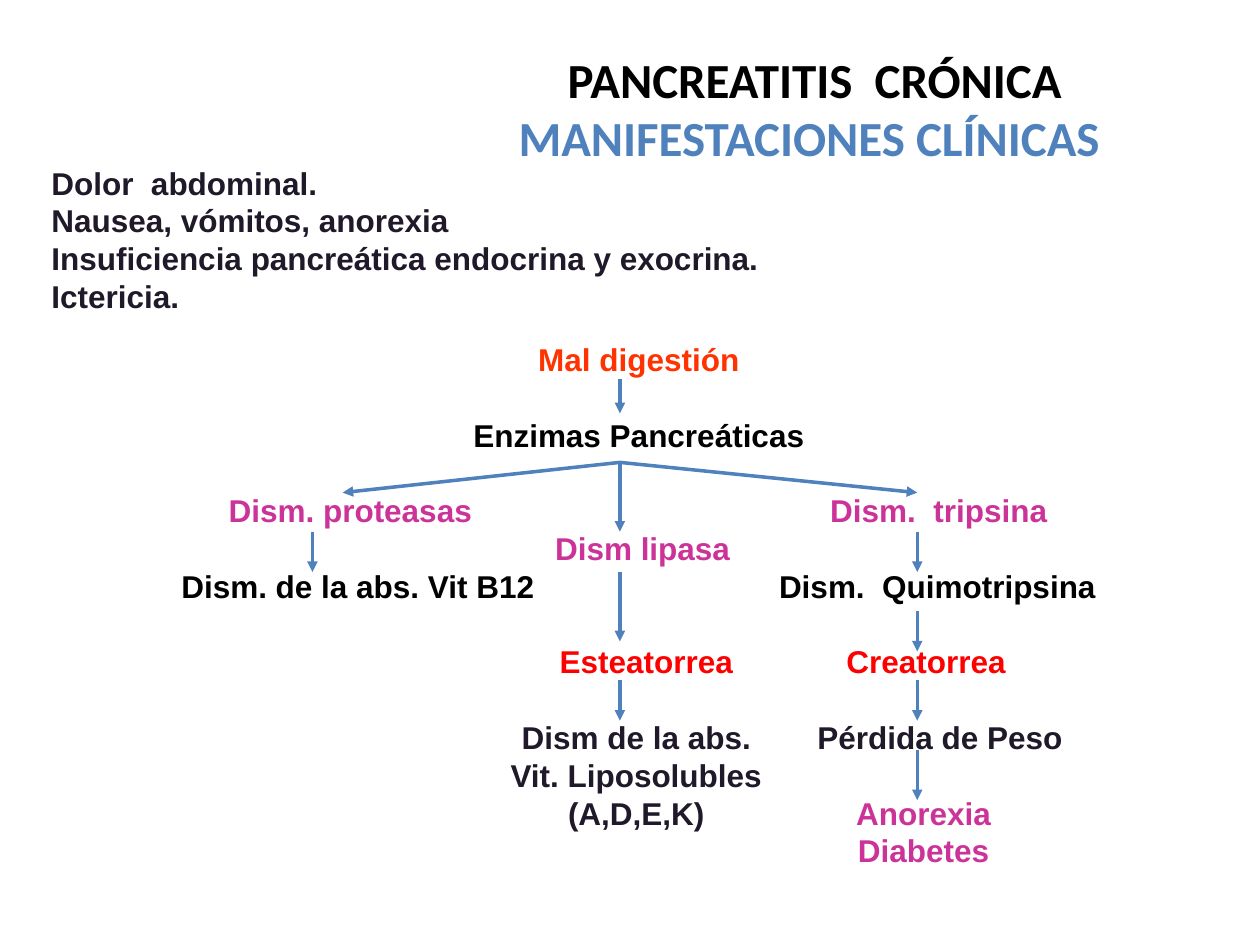
from pptx import Presentation
from pptx.dml.color import RGBColor as Rgb
from pptx.enum.shapes import MSO_CONNECTOR as Link
from pptx.enum.text import PP_ALIGN as Align
from pptx.oxml import parse_xml
from pptx.oxml.ns import nsdecls
from pptx.util import Inches, Pt

deck = Presentation()
deck.slide_width, deck.slide_height = Inches(10), Inches(7.5)
slide = deck.slides.add_slide(deck.slide_layouts[6])
cell = deck.slide_width / 100
BLACK, DARK, BLUE = "000000", "201929", "4F81BD"
PINK, RED, WARM = "CC3399", "FF0000", "FF3300"


def grid(*cells):
    return [round(n * cell) for n in cells]


def write(area, lines, size=18, face="Arial", align=Align.CENTER, pad=0):
    frame = slide.shapes.add_textbox(*grid(*area)).text_frame
    look = {"word_wrap": True, "margin_left": Inches(pad), "margin_right": Inches(pad)}
    for name, value in look.items():
        setattr(frame, name, value)
    for i, (text, tint) in enumerate(lines):
        para = frame.add_paragraph() if i else frame.paragraphs[0]
        para.alignment = align
        run = para.add_run()
        run.text = text
        for name, value in {"size": Pt(size), "name": face, "bold": True}.items():
            setattr(run.font, name, value)
        run.font.color.rgb = Rgb.from_string(tint)


signs = ["Dolor  abdominal.", "Nausea, vómitos, anorexia",
         "Insuficiencia pancreática endocrina y exocrina.", "Ictericia."]
write((3.1, 12.5, 62, 13), [(text, DARK) for text in signs], align=Align.LEFT, pad=0.1)

top, pitch = 26.5, 3
labels = [
    (50.7, 0, WARM, ["Mal digestión"]),
    (50.7, 2, BLACK, ["Enzimas Pancreáticas"]),
    (27.8, 4, PINK, ["Dism. proteasas"]),
    (74.5, 4, PINK, ["Dism.  tripsina"]),
    (51, 5, PINK, ["Dism lipasa"]),
    (28.4, 6, BLACK, ["Dism. de la abs. Vit B12"]),
    (74.4, 6, BLACK, ["Dism.  Quimotripsina"]),
    (51.3, 8, RED, ["Esteatorrea"]),
    (73.5, 8, RED, ["Creatorrea"]),
    (50.5, 10, DARK, ["Dism de la abs.", "Vit. Liposolubles", "(A,D,E,K)"]),
    (74.6, 10, DARK, ["Pérdida de Peso"]),
    (73.3, 12, PINK, ["Anorexia", "Diabetes"]),
]
for mid, row, tint, lines in labels:
    wide = 3 + 1.3 * max(map(len, lines))
    area = (mid - wide / 2, top + row * pitch, wide, 1 + pitch * len(lines))
    write(area, [(text, tint) for text in lines])

left, hub, right = 24.8, 49.2, 72.8
arrows = [
    (hub, 30.1, hub, 32.8), (hub, 36.7, hub, 42.2),
    (hub, 36.7, 27.2, 39.1), (hub, 36.7, right, 39.1),
    (hub, 45.4, hub, 50.9), (hub, 54, hub, 57.2),
    (left, 42.2, left, 45.4), (right, 42.2, right, 45.4),
    (right, 48.5, right, 51.7), (right, 54, right, 57.2),
    (right, 59.5, right, 63.5),
]
for ends in arrows:
    arrow = slide.shapes.add_connector(Link.STRAIGHT, *grid(*ends))
    arrow.line.color.rgb = Rgb.from_string(BLUE)
    arrow.line.width = Pt(2)
    arrow.line._get_or_add_ln().append(
        parse_xml(f'<a:tailEnd {nsdecls("a")} type="triangle"/>'))
    arrow._element.spPr.append(parse_xml(f'<a:effectLst {nsdecls("a")}/>'))

write((30.9, 3.4, 67.5, 10.4),
      [("PANCREATITIS  CRÓNICA", BLACK), ("MANIFESTACIONES CLÍNICAS ", BLUE)],
      size=28, face="Calibri", pad=0.1)

deck.save("out.pptx")
